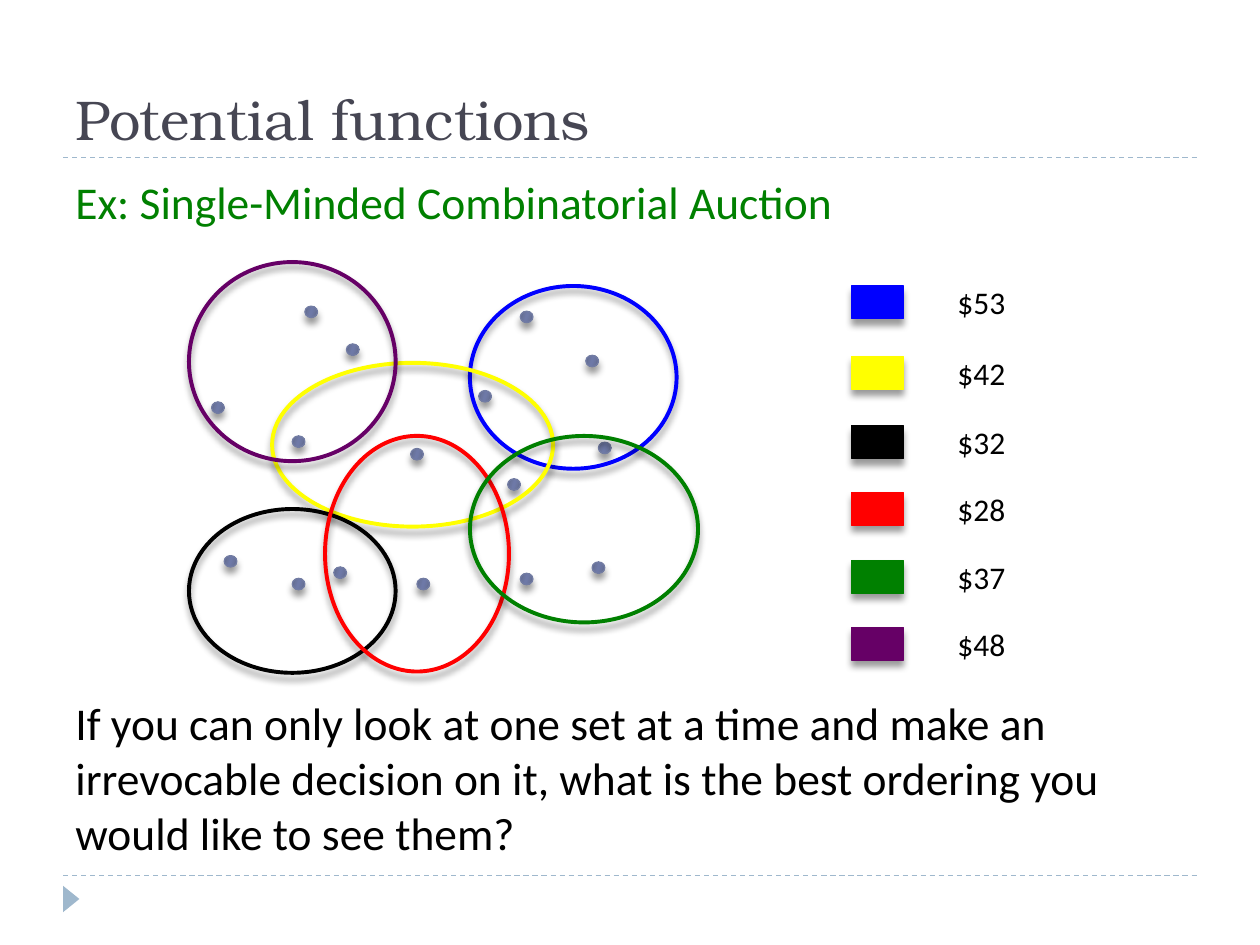
from dataclasses import dataclass

from lxml.etree import SubElement
from pptx import Presentation
from pptx.dml.color import RGBColor
from pptx.enum.dml import MSO_LINE_DASH_STYLE as Dash
from pptx.enum.shapes import MSO_CONNECTOR as Connector, MSO_SHAPE as Shape
from pptx.enum.text import MSO_ANCHOR as Anchor
from pptx.oxml.ns import qn
from pptx.util import Inches, Pt


@dataclass(frozen=True)
class Theme:
    heading_font: str = "TeX Gyre Bonum"
    body_font: str = "Calibri"
    title_size: int = 32
    body_size: int = 26
    label_size: int = 18
    thin: float = 0.75
    thick: float = 2.25
    title: str = "464653"
    text: str = "000000"
    example: str = "008000"
    accent: str = "9FB8CD"
    item_line: str = "727CA3"
    item_angle: int = 344
    item_stops: tuple = ((0, "5D6585"), (30, "6B759E"), (45, "6E79A7"),
                         (55, "6E79A7"), (73, "6B759E"), (100, "5D6585"))


class SlideBuilder:
    """Draws on one slide; lengths are cells of a 100 by 75 grid."""

    def __init__(self, deck, theme):
        self.theme = theme
        self.page = deck.slides.add_slide(deck.slide_layouts[6])
        self.cell = deck.slide_width / 100

    def cells(self, *counts):
        return [round(count * self.cell) for count in counts]

    def text(self, words, area, size, color, font=None, anchor=Anchor.TOP, wrap=True):
        box = self.page.shapes.add_textbox(*self.cells(*area))
        frame = box.text_frame
        frame.word_wrap = wrap
        frame.vertical_anchor = anchor
        paragraph = frame.paragraphs[0]
        paragraph.text = words
        paragraph.font.name = font or self.theme.body_font
        paragraph.font.size = Pt(size)
        paragraph.font.color.rgb = RGBColor.from_string(color)

    def rule(self, row):
        line = self.page.shapes.add_connector(
            Connector.STRAIGHT, *self.cells(5, row, 95, row))
        line.line.color.rgb = RGBColor.from_string(self.theme.accent)
        line.line.width = Pt(self.theme.thin)
        line.line.dash_style = Dash.DASH
        SubElement(line._element.spPr, qn("a:effectLst"))

    def shape(self, kind, area, fill=None, line=None, width=None):
        shape = self.page.shapes.add_shape(kind, *self.cells(*area))
        shape.shadow.inherit = False
        if fill:
            shape.fill.solid()
            shape.fill.fore_color.rgb = RGBColor.from_string(fill)
        else:
            shape.fill.background()
        if line:
            shape.line.color.rgb = RGBColor.from_string(line)
            shape.line.width = Pt(width or self.theme.thin)
        else:
            shape.line.fill.background()
        return shape

    def shadowed(self, *args, **kwargs):
        """A shape with a soft shadow straight below it."""
        shape = self.shape(*args, **kwargs)
        effects = shape._element.spPr.find(qn("a:effectLst"))
        shadow = SubElement(effects, qn("a:outerShdw"), blurRad=str(Pt(4)),
                            dist=str(Pt(3.4)), dir="5400000", rotWithShape="0")
        color = SubElement(shadow, qn("a:srgbClr"), val="000000")
        SubElement(color, qn("a:alpha"), val="40000")
        return shape

    def item(self, left, top):
        dot = self.shadowed(Shape.OVAL, (left, top, 1, 0.9), line=self.theme.item_line)
        dot.fill.gradient()
        dot.fill.gradient_angle = self.theme.item_angle
        stops = dot._element.spPr.find(qn("a:gradFill")).find(qn("a:gsLst"))
        for stop in list(stops):
            stops.remove(stop)
        for percent, color in self.theme.item_stops:
            stop = SubElement(stops, qn("a:gs"), pos=str(percent * 1000))
            SubElement(stop, qn("a:srgbClr"), val=color)

    def bid(self, color, price, legend_row, area):
        """The set's outline, with its colour and price in the legend."""
        self.shadowed(Shape.OVAL, area, line=color, width=self.theme.thick)
        self.shadowed(Shape.RECTANGLE, (67.6, legend_row, 4.1, 2.6), color, color)
        self.text(price, (75, legend_row - 0.7, 5.9, 3.7),
                  self.theme.label_size, self.theme.text, wrap=False)


ITEMS = [(24.2, 24.3), (16.8, 31.9), (27.5, 27.3), (41.3, 24.7),
         (26.5, 45), (17.8, 44.1), (23.2, 45.9), (33.1, 45.9),
         (32.6, 35.6), (38, 31), (46.5, 28.2), (41.3, 45.5),
         (40.3, 38), (47.5, 35.1), (47, 44.6), (23.2, 34.6)]

BIDS = [("0000FF", "$53", 22.7, (37.3, 22.7, 16.4, 14.5)),
        ("FFFF00", "$42", 28.3, (21.6, 28.8, 22.3, 13)),
        ("000000", "$32", 33.8, (15, 40.4, 16.4, 13)),
        ("FF0000", "$28", 39.1, (25.8, 34.6, 14.6, 18.7)),
        ("008000", "$37", 44.5, (37.3, 34.6, 18.1, 14.8)),
        ("660066", "$48", 49.8, (15, 20.8, 16.4, 15.8))]


def main():
    deck = Presentation()
    deck.slide_width, deck.slide_height = Inches(10), Inches(7.5)
    theme = Theme()
    slide = SlideBuilder(deck, theme)

    for row in (69.5, 12.5):
        slide.rule(row)
    marker = slide.shape(Shape.ISOSCELES_TRIANGLE, (4.6, 70.7, 2.1, 1.3), theme.accent)
    marker.rotation = 90

    slide.text("Potential functions", (5, 1.7, 90, 10.8), theme.title_size,
               theme.title, theme.heading_font, Anchor.BOTTOM)
    slide.text("Ex: Single-Minded Combinatorial Auction", (5, 13.3, 90, 5.4),
               theme.body_size, theme.example)
    slide.text("If you can only look at one set at a time and make an irrevocable "
               "decision on it, what is the best ordering you would like to see them?",
               (5, 54.7, 90, 14.2), theme.body_size, theme.text)

    for left, top in ITEMS:
        slide.item(left, top)
    for bid in BIDS:
        slide.bid(*bid)

    deck.save("out.pptx")


if __name__ == "__main__":
    main()
